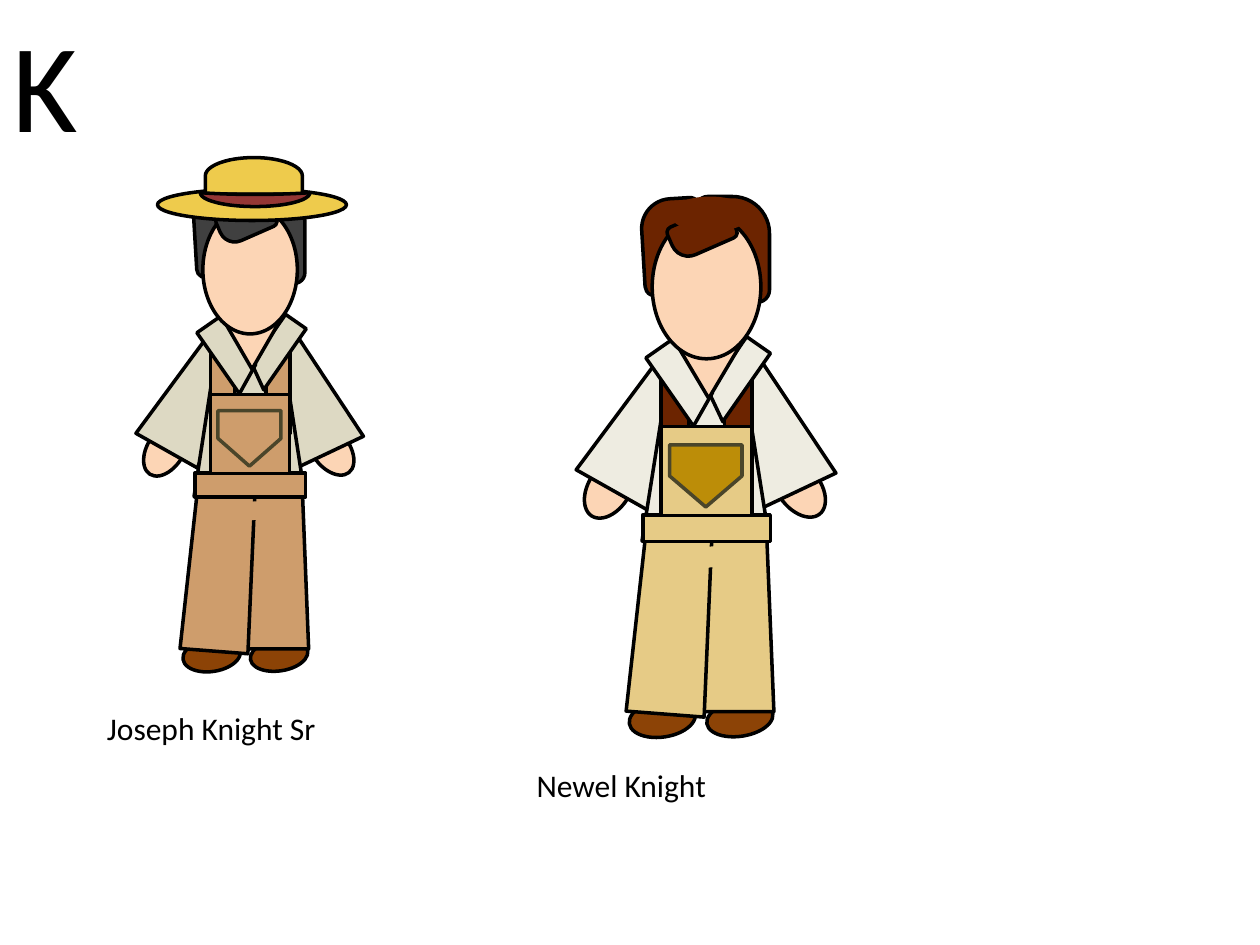
import dataclasses

import pptx
import pptx.dml.color
import pptx.enum.shapes
import pptx.enum.text
import pptx.util

Inches = pptx.util.Inches
Kind = pptx.enum.shapes.MSO_SHAPE
BLACK = "000000"
POCKET_LINE = "4A452A"
LOCK = (0.167, 0.5)


@dataclasses.dataclass
class Part:
    kind: object
    role: str
    left: float
    top: float
    width: float
    height: float
    rotation: float = 0
    adjust: tuple = ()
    flip: str = ""
    line: str = BLACK


BODY = [
    Part(Kind.OVAL, "skin", 2.48, 3.33, 0.29, 0.47, 322.3),
    Part(Kind.OVAL, "skin", 1.17, 3.33, 0.29, 0.47, 32.2),
    Part(Kind.TRAPEZOID, "shirt", 1.32, 2.52, 0.56, 1.13, 29.4),
    Part(Kind.TRAPEZOID, "shirt", 2.05, 2.55, 0.63, 1.1, 334.7),
    Part(Kind.TRAPEZOID, "shirt", 1.54, 2.51, 0.88, 1.43),
    Part(Kind.OVAL, "shoe", 2.09, 4.97, 0.25, 0.46, 81.4),
    Part(Kind.OVAL, "shoe", 1.55, 4.97, 0.26, 0.46, 81.4),
    Part(Kind.TRAPEZOID, "trousers", 1.88, 3.82, 0.57, 1.33, 0, (0.092,)),
    Part(Kind.TRAPEZOID, "trousers", 1.48, 3.82, 0.54, 1.35, 4.4, (0.082,)),
    Part(Kind.OVAL, "trousers", 1.87, 3.71, 0.15, 0.7, 264.6, line=""),
    Part(Kind.ROUND_2_DIAG_RECTANGLE, "hair", 1.41, 1.65, 0.68, 0.41, 266.6, LOCK),
    Part(Kind.ROUND_2_DIAG_RECTANGLE, "hair", 1.91, 1.5, 0.51, 0.75, 0, LOCK),
    Part(Kind.RECTANGLE, "straps", 1.67, 2.69, 0.19, 0.75),
    Part(Kind.RECTANGLE, "trousers", 1.89, 3.41, 0.19, 0.88, 90),
    Part(Kind.RECTANGLE, "straps", 2.11, 2.69, 0.19, 0.75),
    Part(Kind.FLOWCHART_MANUAL_INPUT, "shirt", 2.08, 2.5, 0.2, 0.59, 34.9, flip="v"),
    Part(Kind.FLOWCHART_MANUAL_INPUT, "shirt", 1.71, 2.52, 0.24, 0.59, 325.1, flip="hv"),
    Part(Kind.RECTANGLE, "trousers", 1.67, 3.13, 0.63, 0.63),
    Part(Kind.PENTAGON, "pocket", 1.76, 3.23, 0.44, 0.5, 90, line=POCKET_LINE),
    Part(Kind.ISOSCELES_TRIANGLE, "skin", 1.74, 2.48, 0.52, 0.45, 180),
    Part(Kind.OVAL, "skin", 1.61, 1.63, 0.75, 1.02),
    Part(Kind.ROUND_2_DIAG_RECTANGLE, "hair", 1.73, 1.63, 0.45, 0.25, 336.4, LOCK),
    Part(Kind.OVAL, "hair", 1.73, 1.5, 0.56, 0.25, line=""),
]

HAT = [
    Part(Kind.OVAL, "straw", 1.25, 1.5, 1.5, 0.25),
    Part(Kind.FLOWCHART_DELAY, "straw", 1.87, 1.01, 0.29, 0.77, 270),
    Part(Kind.MOON, "band", 1.97, 1.15, 0.11, 0.87, 90, (0.875,), "hv"),
]

SHARED = {"skin": "FCD5B5", "shoe": "8C4306"}
JOSEPH = SHARED | {
    "shirt": "DDD9C3", "trousers": "CE9D6C", "straps": "CE9D6C",
    "pocket": "CE9D6C", "hair": "404040", "straw": "EECB4C", "band": "953735",
}
NEWEL = SHARED | {
    "shirt": "EEECE1", "trousers": "E6CB86", "straps": "6C2400",
    "pocket": "BC8D08", "hair": "6C2400",
}


def color(value):
    return pptx.dml.color.RGBColor.from_string(value)


def resize(part, origin, target, scale):
    center_x = target[0] + (part.left + part.width / 2 - origin[0]) * scale[0]
    center_y = target[1] + (part.top + part.height / 2 - origin[1]) * scale[1]
    sideways = 45 <= part.rotation % 180 < 135
    scale_w, scale_h = reversed(scale) if sideways else scale
    width, height = part.width * scale_w, part.height * scale_h
    return dataclasses.replace(part, left=center_x - width / 2,
                               top=center_y - height / 2, width=width, height=height)


def add_part(group, part, palette):
    shape = group.shapes.add_shape(part.kind, Inches(part.left), Inches(part.top),
                                   Inches(part.width), Inches(part.height))
    shape.shadow.inherit = False
    shape.rotation = part.rotation
    for index, value in enumerate(part.adjust):
        shape.adjustments[index] = value
    for axis in part.flip:
        shape._element.spPr.xfrm.set("flip" + axis.upper(), "1")
    shape.fill.solid()
    shape.fill.fore_color.rgb = color(palette[part.role])
    if part.line:
        shape.line.color.rgb = color(part.line)
        shape.line.width = pptx.util.Pt(2)
    else:
        shape.line.fill.background()


def add_figure(page, parts, palette):
    group = page.shapes.add_group_shape()
    for part in parts:
        add_part(group, part, palette)


def add_text(page, text, left, top, width, height, size, wrap=True):
    box = page.shapes.add_textbox(Inches(left), Inches(top), Inches(width), Inches(height))
    frame = box.text_frame
    frame.word_wrap = wrap
    frame.auto_size = pptx.enum.text.MSO_AUTO_SIZE.SHAPE_TO_FIT_TEXT
    span = frame.paragraphs[0].add_run()
    span.text = text
    span.font.size = pptx.util.Pt(size)
    span.font.name = "Calibri"
    span.font.color.rgb = color(BLACK)


def main():
    deck = pptx.Presentation()
    deck.slide_width, deck.slide_height = Inches(10), Inches(7.5)
    page = deck.slides.add_slide(deck.slide_layouts[6])
    add_text(page, "K", 0, 0, 0.67, 1.31, 72, wrap=False)
    add_figure(page, BODY + HAT, JOSEPH)
    add_text(page, "Joseph Knight Sr", 0.75, 5.58, 2.75, 0.4, 18)
    larger = [resize(part, (1.17, 1.5), (4.67, 1.56), (1.15, 1.12)) for part in BODY]
    add_figure(page, larger, NEWEL)
    add_text(page, "Newel Knight", 4.16, 6.03, 2.75, 0.4, 18)
    deck.save("out.pptx")


if __name__ == "__main__":
    main()
